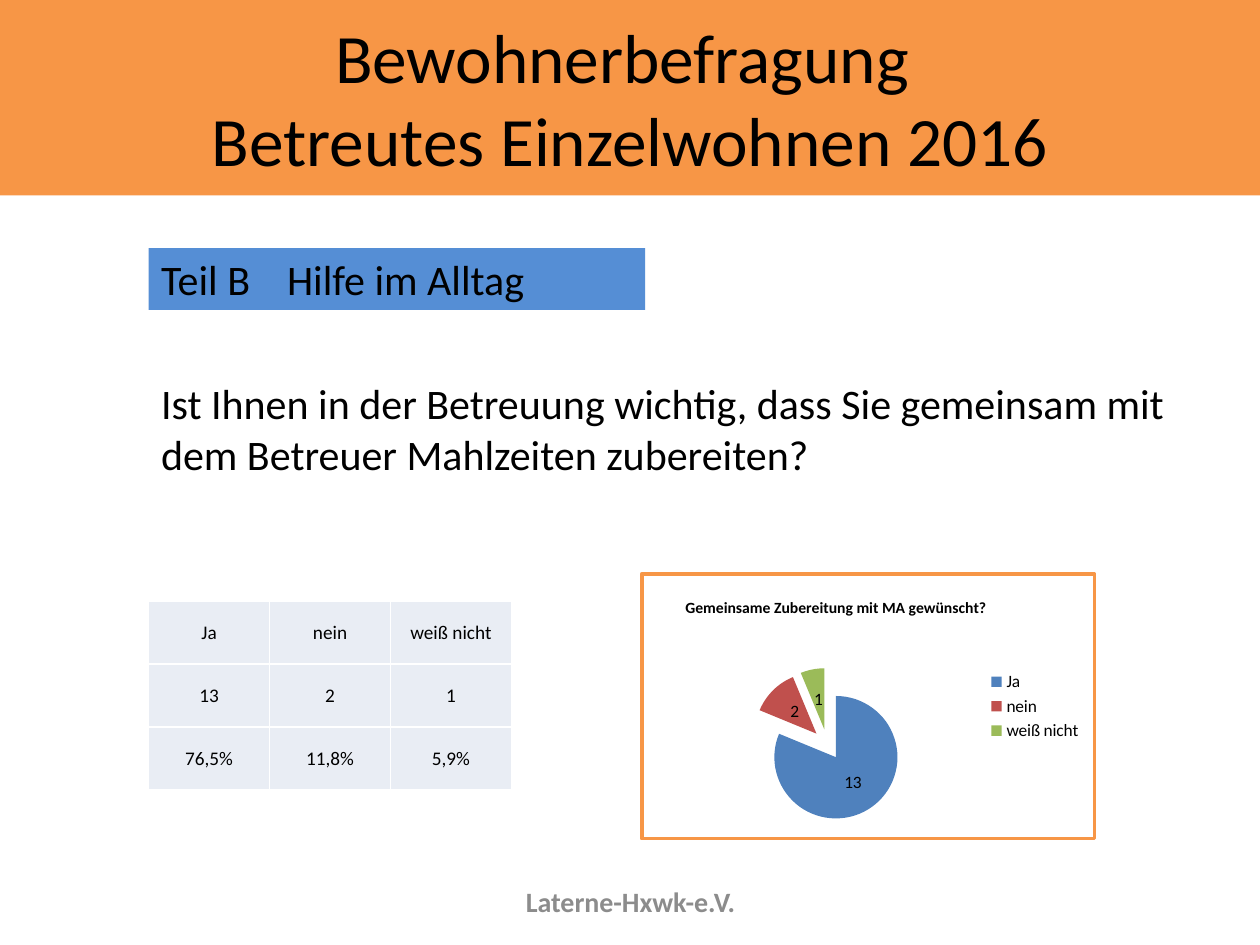
import pptx
import pptx.chart.data
import pptx.dml.color
import pptx.enum.chart
import pptx.enum.shapes
import pptx.enum.text
import pptx.oxml
import pptx.oxml.ns
import pptx.util

Inches = pptx.util.Inches
Pt = pptx.util.Pt
RGBColor = pptx.dml.color.RGBColor
ALIGN = pptx.enum.text.PP_ALIGN
MIDDLE = pptx.enum.text.MSO_ANCHOR.MIDDLE
TOP = pptx.enum.text.MSO_ANCHOR.TOP
qn = pptx.oxml.ns.qn

BLACK = RGBColor(0x00, 0x00, 0x00)
WHITE = RGBColor(0xFF, 0xFF, 0xFF)
GRAY = RGBColor(0x8C, 0x8C, 0x8C)
ORANGE = RGBColor(0xF7, 0x96, 0x46)
BANNER_BLUE = RGBColor(0x55, 0x8E, 0xD5)
CELL_FILL = RGBColor(0xE9, 0xED, 0xF4)
SLICE_COLORS = [RGBColor(0x4F, 0x81, 0xBD), RGBColor(0xC0, 0x50, 0x4D), RGBColor(0x9B, 0xBB, 0x59)]
FONT = "Calibri"
NAMESPACES = pptx.oxml.ns.nsdecls("c", "a")


def write_text(frame, text, size, color=BLACK, bold=False, align=ALIGN.LEFT, anchor=MIDDLE):
    frame.word_wrap = True
    frame.vertical_anchor = anchor
    paragraph = frame.paragraphs[0]
    paragraph.text = text
    paragraph.alignment = align
    for run in paragraph.runs:
        run.font.name = FONT
        run.font.size = Pt(size)
        run.font.bold = bold
        run.font.color.rgb = color


def manual_layout(x, y, extra=""):
    return pptx.oxml.parse_xml(
        f'<c:layout {NAMESPACES}><c:manualLayout>{extra}'
        '<c:xMode val="edge"/><c:yMode val="edge"/>'
        f'<c:x val="{x}"/><c:y val="{y}"/></c:manualLayout></c:layout>'
    )


presentation = pptx.Presentation()
presentation.slide_width = Inches(10)
presentation.slide_height = Inches(7.5)
slide = presentation.slides.add_slide(presentation.slide_layouts[6])

banners = [
    ("Bewohnerbefragung \nBetreutes Einzelwohnen 2016", (0, 0, 10, 1.55), ORANGE, 39.6, ALIGN.CENTER),
    ("Teil B\tHilfe im Alltag", (1.18, 1.97, 3.94, 0.49), BANNER_BLUE, 24, ALIGN.LEFT),
]
for text, box, color, size, align in banners:
    shape = slide.shapes.add_shape(pptx.enum.shapes.MSO_SHAPE.RECTANGLE, *map(Inches, box))
    shape.shadow.inherit = False
    shape.fill.solid()
    shape.fill.fore_color.rgb = color
    shape.line.fill.background()
    write_text(shape.text_frame, text, size, align=align)

footer = slide.shapes.add_textbox(Inches(3.42), Inches(6.95), Inches(3.17), Inches(0.4))
write_text(footer.text_frame, "Laterne-Hxwk-e.V.", 16, color=GRAY, bold=True, align=ALIGN.CENTER)

question = slide.shapes.add_textbox(Inches(1.18), Inches(2.95), Inches(8.31), Inches(0.91))
write_text(
    question.text_frame,
    "Ist Ihnen in der Betreuung wichtig, dass Sie gemeinsam mit dem Betreuer Mahlzeiten zubereiten?",
    24,
    anchor=TOP,
)

answers = ["Ja", "nein", "weiß nicht"]
counts = [13, 2, 1]

chart_data = pptx.chart.data.CategoryChartData(number_format="#,##0")
chart_data.categories = answers
chart_data.add_series("Series 1", counts)
chart = slide.shapes.add_chart(
    pptx.enum.chart.XL_CHART_TYPE.PIE,
    Inches(5.08), Inches(4.54), Inches(3.62), Inches(2.13), chart_data,
).chart
chart.font.name = FONT
chart.font.size = Pt(10)
chart.font.color.rgb = BLACK
chart.has_title = True
write_text(chart.chart_title.text_frame, "Gemeinsame Zubereitung mit MA gewünscht?", 9, bold=True, align=ALIGN.CENTER)
chart.has_legend = True
chart.legend.position = pptx.enum.chart.XL_LEGEND_POSITION.RIGHT
chart.legend.include_in_layout = False

plot = chart.plots[0]
plot.vary_by_categories = True
plot.has_data_labels = True
labels = plot.data_labels
labels.show_value = True
labels.show_percentage = False
labels.number_format = "#,##0"
labels.number_format_is_linked = False
labels.position = pptx.enum.chart.XL_LABEL_POSITION.CENTER
series = plot.series[0]
for index, color in enumerate(SLICE_COLORS):
    fill = series.points[index].format.fill
    fill.solid()
    fill.fore_color.rgb = color

chart_space = chart._chartSpace
explosion = pptx.oxml.parse_xml(f'<c:explosion {NAMESPACES} val="25"/>')
chart_space.find(".//" + qn("c:dPt")).addprevious(explosion)

for layout in chart_space.findall(".//" + qn("c:layout")):
    layout.getparent().remove(layout)
title_text = chart_space.find(".//" + qn("c:title")).find(qn("c:tx"))
title_text.addnext(manual_layout(0.09, 0.08))
plot_layout = manual_layout(0.24, 0.34, '<c:layoutTarget val="inner"/>')
for tag, value in (("c:w", 0.34), ("c:h", 0.61)):
    plot_layout[0].append(pptx.oxml.parse_xml(f'<{tag} {NAMESPACES} val="{value}"/>'))
chart_space.find(".//" + qn("c:plotArea")).insert(0, plot_layout)

chart_space.find(qn("c:chart")).addnext(pptx.oxml.parse_xml(
    f'<c:spPr {NAMESPACES}><a:solidFill><a:srgbClr val="{WHITE}"/></a:solidFill>'
    f'<a:ln w="{Pt(2)}"><a:solidFill><a:srgbClr val="{ORANGE}"/></a:solidFill></a:ln></c:spPr>'
))

rows = [answers, [str(count) for count in counts], ["76,5%", "11,8%", "5,9%"]]
table = slide.shapes.add_table(3, 3, Inches(1.18), Inches(4.77), Inches(2.88), Inches(1.5)).table
for column in table.columns:
    column.width = Inches(0.96)
for row_index, row in enumerate(rows):
    table.rows[row_index].height = Inches(0.5)
    for column_index, text in enumerate(row):
        cell = table.cell(row_index, column_index)
        cell.margin_left = cell.margin_right = cell.margin_top = Inches(0.01)
        cell.margin_bottom = 0
        cell.vertical_anchor = MIDDLE
        write_text(cell.text_frame, text, 11, align=ALIGN.CENTER)
        properties = cell._tc.get_or_add_tcPr()
        for side in ("lnL", "lnR", "lnT", "lnB"):
            properties.append(pptx.oxml.parse_xml(
                f'<a:{side} {NAMESPACES} w="{Pt(1)}"><a:solidFill>'
                f'<a:srgbClr val="{WHITE}"/></a:solidFill></a:{side}>'
            ))
        cell.fill.solid()
        cell.fill.fore_color.rgb = CELL_FILL

presentation.save("out.pptx")
